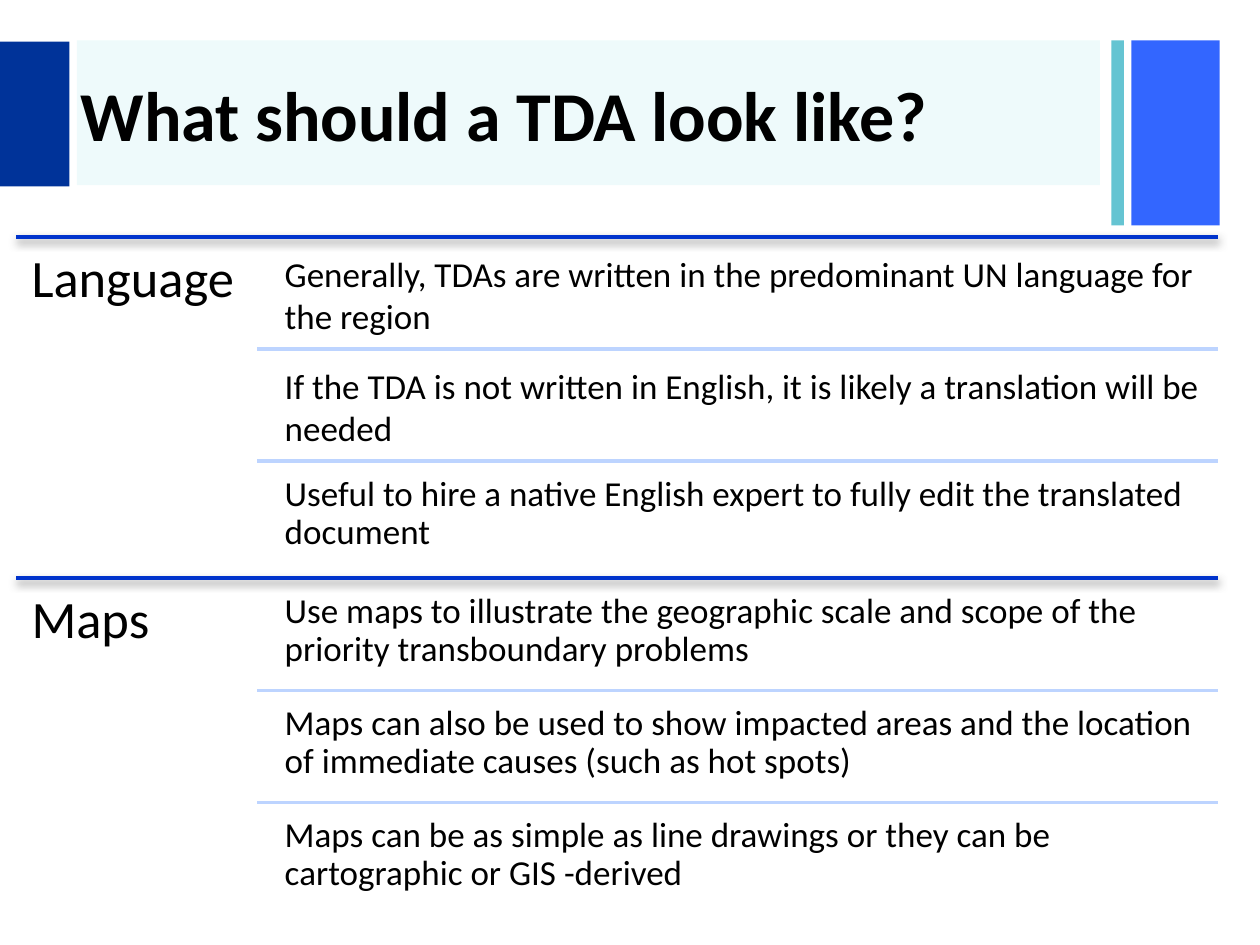
from dataclasses import dataclass

from lxml.etree import SubElement
from pptx import Presentation
from pptx.dml.color import RGBColor
from pptx.enum.shapes import MSO_CONNECTOR, MSO_SHAPE
from pptx.enum.text import MSO_ANCHOR, PP_ALIGN
from pptx.oxml import parse_xml
from pptx.oxml.ns import nsdecls, qn
from pptx.slide import Slide
from pptx.text.text import TextFrame
from pptx.util import Inches, Pt


@dataclass(frozen=True)
class Theme:
    font: str = "Calibri"
    text: str = "000000"
    section_rule: str = "0033CC"
    item_rule: str = "BDD4FF"
    title_size: int = 40
    section_size: int = 30
    item_size: int = 20
    section_rule_width: float = 2.25
    item_rule_width: float = 2


@dataclass(frozen=True)
class Box:
    left: float
    top: float
    width: float
    height: float

    def lengths(self) -> list[Inches]:
        return [Inches(value) for value in (self.left, self.top, self.width, self.height)]


@dataclass(frozen=True)
class Block:
    box: Box
    color: str
    opacity: int = 100


@dataclass(frozen=True)
class Item:
    text: str
    tight: bool = True


@dataclass(frozen=True)
class Section:
    heading: str
    items: tuple[Item, ...]


THEME = Theme()

TITLE = "What should a TDA look like?"
TITLE_BOX = Box(0.54, 0.34, 8.27, 1.12)

HEADER_BLOCKS = (
    Block(Box(8.98, 0.32, 0.7, 1.47), "3366FF"),
    Block(Box(8.82, 0.32, 0.1, 1.47), "65C4D2"),
    Block(Box(0.61, 0.32, 8.12, 1.15), "14C5D0", opacity=7),
    Block(Box(0, 0.33, 0.55, 1.15), "003399"),
)

SECTIONS = (
    Section("Language", (
        Item("Generally, TDAs are written in the predominant UN language for the region", tight=False),
        Item("If the TDA is not written in English, it is likely a translation will be needed", tight=False),
        Item("Useful to hire a native English expert to fully edit the translated document"),
    )),
    Section("Maps", (
        Item("Use maps to illustrate the geographic scale and scope of the priority transboundary problems"),
        Item("Maps can also be used to show impacted areas and the location of immediate causes "
             "(such as hot spots)"),
        Item("Maps can be as simple as line drawings or they can be cartographic or GIS -derived"),
    )),
)

SECTIONS_TOP = 1.88
SECTION_PITCH = 2.71
SECTION_LEFT = 0.13
HEADING_WIDTH = 1.91
HEADING_HEIGHT = 2.72
RULE_RIGHT = 9.67
ITEM_RULE_LEFT = SECTION_LEFT + HEADING_WIDTH
ITEM_LEFT = 2.18
ITEM_HEIGHT = 0.85
ITEM_GAP = 0.04


def write_text(frame: TextFrame, text: str, size: int, bold: bool = False, tight: bool = False) -> None:
    """Fill the first paragraph; tight text has 90% lines and 35% space after."""
    paragraph = frame.paragraphs[0]
    paragraph.alignment = PP_ALIGN.LEFT
    if tight:
        paragraph.line_spacing = 0.9
        paragraph.space_after = Pt(size * 0.35)
    run = paragraph.add_run()
    run.text = text
    run.font.name = THEME.font
    run.font.size = Pt(size)
    run.font.bold = bold
    run.font.color.rgb = RGBColor.from_string(THEME.text)


def add_block(slide: Slide, block: Block) -> None:
    shape = slide.shapes.add_shape(MSO_SHAPE.RECTANGLE, *block.box.lengths())
    shape.shadow.inherit = False
    shape.fill.solid()
    shape.fill.fore_color.rgb = RGBColor.from_string(block.color)
    shape.line.fill.background()
    if block.opacity < 100:
        color = shape.element.spPr.find(f"{qn('a:solidFill')}/{qn('a:srgbClr')}")
        SubElement(color, qn("a:alpha"), val=str(block.opacity * 1000))


def add_title(slide: Slide) -> None:
    """Fill the title placeholder and bring it in front of the header blocks."""
    title = slide.shapes.title
    title.left, title.top, title.width, title.height = TITLE_BOX.lengths()
    title.text_frame.word_wrap = True
    title.text_frame.vertical_anchor = MSO_ANCHOR.MIDDLE
    write_text(title.text_frame, TITLE, THEME.title_size, bold=True)
    title.element.getparent().append(title.element)


def add_text_box(slide: Slide, box: Box, text: str, size: int, inset: float, tight: bool) -> None:
    frame = slide.shapes.add_textbox(*box.lengths()).text_frame
    frame.word_wrap = True
    frame.margin_left = frame.margin_right = Inches(inset)
    frame.margin_top = frame.margin_bottom = Inches(inset)
    write_text(frame, text, size, tight=tight)


def add_rule(slide: Slide, left: float, top: float, color: str, width: float, shadow: bool = False) -> None:
    rule = slide.shapes.add_connector(
        MSO_CONNECTOR.STRAIGHT, Inches(left), Inches(top), Inches(RULE_RIGHT), Inches(top))
    rule.line.color.rgb = RGBColor.from_string(color)
    rule.line.width = Pt(width)
    outer_shadow = (
        f'<a:outerShdw blurRad="{Pt(5)}" dist="{Pt(2)}" dir="5400000" rotWithShape="0">'
        '<a:srgbClr val="808080"><a:alpha val="75000"/></a:srgbClr></a:outerShdw>'
    ) if shadow else ""
    rule.element.spPr.append(
        parse_xml(f'<a:effectLst {nsdecls("a")}>{outer_shadow}</a:effectLst>'))


def add_section(slide: Slide, section: Section, top: float) -> None:
    add_rule(slide, SECTION_LEFT, top, THEME.section_rule, THEME.section_rule_width, shadow=True)
    heading_box = Box(SECTION_LEFT, top, HEADING_WIDTH, HEADING_HEIGHT)
    add_text_box(slide, heading_box, section.heading, THEME.section_size, inset=0.12, tight=True)
    for index, item in enumerate(section.items):
        rule_top = top + index * (ITEM_HEIGHT + ITEM_GAP)
        if index:
            add_rule(slide, ITEM_RULE_LEFT, rule_top, THEME.item_rule, THEME.item_rule_width)
        item_box = Box(ITEM_LEFT, rule_top + ITEM_GAP, RULE_RIGHT - ITEM_LEFT, ITEM_HEIGHT)
        add_text_box(slide, item_box, item.text, THEME.item_size, inset=0.08, tight=item.tight)


def main() -> None:
    presentation = Presentation()
    presentation.slide_width = Inches(10)
    presentation.slide_height = Inches(7.5)
    slide = presentation.slides.add_slide(presentation.slide_layouts.get_by_name("Title Only"))
    for block in HEADER_BLOCKS:
        add_block(slide, block)
    add_title(slide)
    for index, section in enumerate(SECTIONS):
        add_section(slide, section, SECTIONS_TOP + index * SECTION_PITCH)
    presentation.save("out.pptx")


if __name__ == "__main__":
    main()
